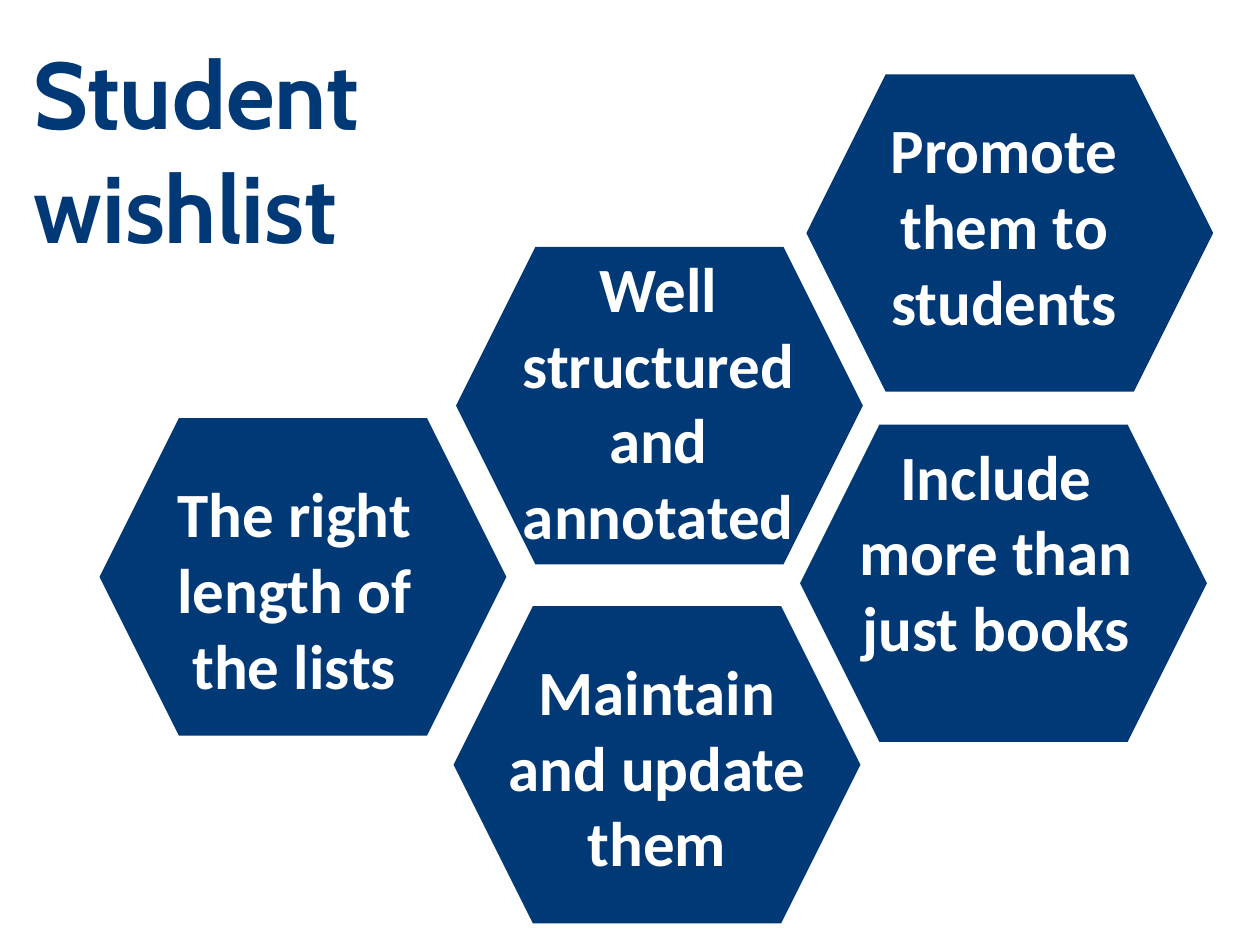
from dataclasses import dataclass

from pptx import Presentation
from pptx.dml.color import RGBColor
from pptx.enum.shapes import MSO_SHAPE
from pptx.enum.text import MSO_AUTO_SIZE, PP_ALIGN
from pptx.slide import Slide
from pptx.util import Pt

HEXAGON = MSO_SHAPE.HEXAGON
GROW = MSO_AUTO_SIZE.SHAPE_TO_FIT_TEXT
LEFT = PP_ALIGN.LEFT
CENTER = PP_ALIGN.CENTER

COLOURS = {"navy": "003976", "white": "FFFFFF"}
HEXAGON_WIDTH = 232.5
HEXAGON_HEIGHT = 181.4


@dataclass
class Label:
    text: str
    left: float
    top: float
    width: float
    height: float = 138.2
    size: int = 36
    font: str = "Calibri"
    colour: str = "white"
    align: PP_ALIGN = CENTER


@dataclass
class Wish:
    left: float
    top: float
    label: Label


TITLE = Label("Student wishlist", 12.2, 16.6, 383, 138.2, 54, "Cabin", "navy", LEFT)

WISHES = [
    Wish(460.8, 42.5, Label("Promote them to students", 467.3, 59.8, 213.1)),
    Wish(260.6, 141.1, Label("Well structured and annotated", 279.4, 139, 193.7, 181.4)),
    Wish(457.2, 242.6, Label("Include more than just books", 465.1, 246.2, 208.1)),
    Wish(56.9, 239, Label("The right length of the lists", 71.3, 267.8, 193.7)),
    Wish(259.2, 346.3, Label("Maintain and update them", 278.6, 369.4, 193.7)),
]


def colour(name: str) -> RGBColor:
    return RGBColor.from_string(COLOURS[name])


def draw_hexagon(page: Slide, wish: Wish) -> None:
    hexagon = page.shapes.add_shape(
        HEXAGON, Pt(wish.left), Pt(wish.top), Pt(HEXAGON_WIDTH), Pt(HEXAGON_HEIGHT)
    )
    hexagon.shadow.inherit = False
    hexagon.fill.solid()
    hexagon.fill.fore_color.rgb = colour("navy")
    hexagon.line.fill.background()


def draw_label(page: Slide, label: Label) -> None:
    box = page.shapes.add_textbox(
        Pt(label.left), Pt(label.top), Pt(label.width), Pt(label.height)
    )
    frame = box.text_frame
    frame.word_wrap = True
    frame.auto_size = GROW
    para = frame.paragraphs[0]
    para.text = label.text
    para.alignment = label.align
    para.font.name = label.font
    para.font.size = Pt(label.size)
    para.font.bold = True
    para.font.color.rgb = colour(label.colour)


def main() -> None:
    deck = Presentation()
    deck.slide_width = Pt(720)
    deck.slide_height = Pt(540)
    page = deck.slides.add_slide(deck.slide_layouts[6])
    for wish in WISHES:
        draw_hexagon(page, wish)
    for wish in WISHES:
        draw_label(page, wish.label)
    draw_label(page, TITLE)
    deck.save("out.pptx")


if __name__ == "__main__":
    main()
